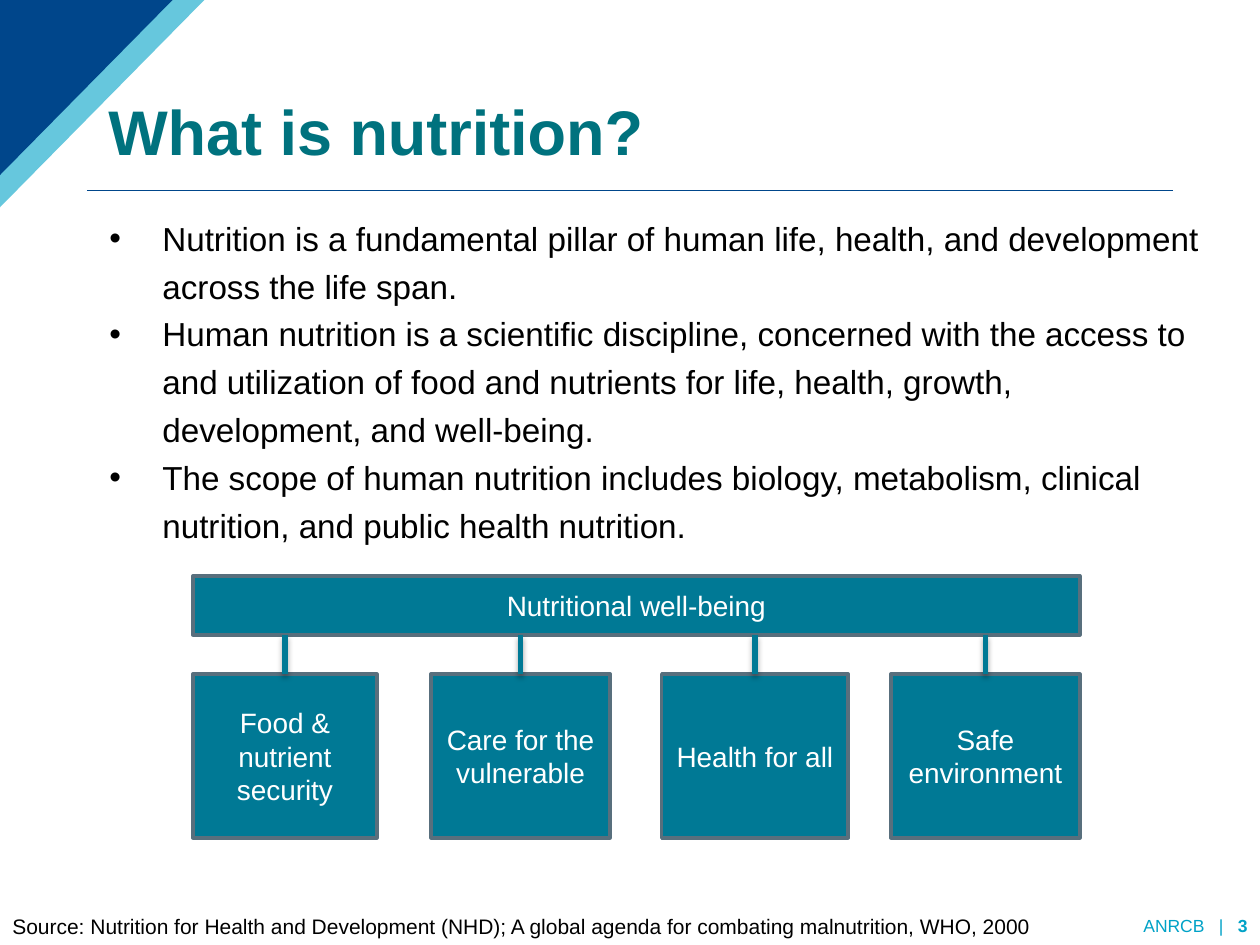
"""Build the slide on what nutrition is, with its four-pillar diagram."""
import pptx
import pptx.dml.color
import pptx.enum.shapes
import pptx.enum.text
import pptx.oxml
import pptx.oxml.ns
import pptx.util

Cm = pptx.util.Cm
Pt = pptx.util.Pt
RGBColor = pptx.dml.color.RGBColor
MSO_ANCHOR = pptx.enum.text.MSO_ANCHOR
PP_ALIGN = pptx.enum.text.PP_ALIGN

NAVY = RGBColor(0x00, 0x46, 0x8B)
CYAN = RGBColor(0x00, 0xA2, 0xC7)
TITLE_TEAL = RGBColor(0x00, 0x72, 0x7E)
BOX_TEAL = RGBColor(0x00, 0x79, 0x95)
SLATE = RGBColor(0x58, 0x6F, 0x7D)
BLACK = RGBColor(0x00, 0x00, 0x00)
WHITE = RGBColor(0xFF, 0xFF, 0xFF)
NS = pptx.oxml.ns.nsdecls("a")


def add_run(p, text, size, color, bold=False):
    r = p.add_run()
    r.text = text
    r.font.name = "Arial"
    r.font.size = Pt(size)
    r.font.bold = bold
    r.font.color.rgb = color
    return r


def add_box(left, top, width, height, text):
    sp = slide.shapes.add_shape(
        pptx.enum.shapes.MSO_SHAPE.RECTANGLE, Cm(left), Cm(top), Cm(width), Cm(height))
    sp.shadow.inherit = False
    sp.fill.solid()
    sp.fill.fore_color.rgb = BOX_TEAL
    sp.line.color.rgb = SLATE
    sp.line.width = Pt(2)
    tf = sp.text_frame
    tf.word_wrap = True
    tf.vertical_anchor = MSO_ANCHOR.MIDDLE
    p = tf.paragraphs[0]
    p.alignment = PP_ALIGN.CENTER
    add_run(p, text, 16, WHITE)
    return sp


prs = pptx.Presentation()
prs.slide_width = Cm(25.4)
prs.slide_height = Cm(19.05)
slide = prs.slides.add_slide(prs.slide_layouts[1])

STRAIGHT = pptx.enum.shapes.MSO_CONNECTOR.STRAIGHT
rule = slide.shapes.add_connector(STRAIGHT, Cm(1.75), Cm(3.84), Cm(23.65), Cm(3.84))
rule.line.color.rgb = NAVY
rule.line.width = Pt(0.75)
rule._element.spPr.append(pptx.oxml.parse_xml(f"<a:effectLst {NS}/>"))

for width, height, color, alpha in [(4.12, 4.18, CYAN, 60), (3.48, 3.53, NAVY, 100)]:
    fb = slide.shapes.build_freeform(0, 0)
    fb.add_line_segments([(Cm(width), 0), (0, Cm(height))], close=True)
    sp = fb.convert_to_shape()
    sp.shadow.inherit = False
    sp.fill.solid()
    sp.fill.fore_color.rgb = color
    sp.line.fill.background()
    if alpha < 100:
        clr = sp._element.spPr.find(".//" + pptx.oxml.ns.qn("a:srgbClr"))
        clr.append(pptx.oxml.parse_xml(f'<a:alpha {NS} val="{alpha * 1000}"/>'))

title = slide.shapes.title
title.left, title.top, title.width, title.height = Cm(1.93), Cm(1.63), Cm(21.89), Cm(1.9)
tf = title.text_frame
tf.auto_size = pptx.enum.text.MSO_AUTO_SIZE.NONE
tf.vertical_anchor = MSO_ANCHOR.BOTTOM
p = tf.paragraphs[0]
p.alignment = PP_ALIGN.LEFT
p.line_spacing = 0.9
add_run(p, "What is nutrition?", 36, TITLE_TEAL, True)

body = slide.placeholders[1]
body.left, body.top, body.width, body.height = Cm(1.75), Cm(4.11), Cm(23.06), Cm(6.83)
tf = body.text_frame
tf.auto_size = pptx.enum.text.MSO_AUTO_SIZE.NONE
points = [
    "Nutrition is a fundamental pillar of human life, health, and development "
    "across the life span.",
    "Human nutrition is a scientific discipline, concerned with the access to and "
    "utilization of food and nutrients for life, health, growth, development, "
    "and well-being.",
    "The scope of human nutrition includes biology, metabolism, clinical nutrition, "
    "and public health nutrition.",
]
for i, text in enumerate(points):
    p = tf.add_paragraph() if i else tf.paragraphs[0]
    p.line_spacing = 1.2
    p.space_before = Pt(0)
    pPr = p._p.get_or_add_pPr()
    pPr.set("marL", str(Cm(1.27)))
    pPr.set("indent", str(Cm(-1.07)))
    for bullet in [f'<a:buClr {NS}><a:srgbClr val="{BLACK}"/></a:buClr>',
                   f'<a:buFont {NS} typeface="Arial"/>',
                   f'<a:buChar {NS} char="•"/>']:
        pPr.append(pptx.oxml.parse_xml(bullet))
    add_run(p, text, 19, BLACK)

footer = slide.shapes.add_textbox(Cm(21.2), Cm(18.4), Cm(4.2), Cm(0.53))
tf = footer.text_frame
tf.word_wrap = True
tf.vertical_anchor = MSO_ANCHOR.MIDDLE
p = tf.paragraphs[0]
p.alignment = PP_ALIGN.RIGHT
for text in ["ANRCB", " ", "|", " ", "3"]:
    r = add_run(p, text, 10, CYAN, text == "3")
    if text == " ":
        r.font._element.set("spc", "550")

source = slide.shapes.add_textbox(Cm(0), Cm(18.29), Cm(22.63), Cm(0.76))
tf = source.text_frame
tf.word_wrap = True
add_run(tf.paragraphs[0],
        "Source: Nutrition for Health and Development (NHD); A global agenda for "
        "combating malnutrition, WHO, 2000", 12, BLACK)

bar = add_box(3.89, 11.61, 17.88, 1.19, "Nutritional well-being")
pillars = [
    (3.89, 3.71, "Food & nutrient security"),
    (8.69, 3.61, "Care for the vulnerable"),
    (13.34, 3.76, "Health for all"),
    (17.96, 3.81, "Safe environment"),
]
for left, width, text in pillars:
    sp = add_box(left, 13.59, width, 3.3, text)
    x = sp.left + sp.width // 2
    link = slide.shapes.add_connector(STRAIGHT, x, bar.top + bar.height, x, sp.top)
    link.end_connect(sp, 0)
    link.line.color.rgb = BOX_TEAL
    link.line.width = Pt(3)
    link._element.spPr.append(pptx.oxml.parse_xml(
        f'<a:effectLst {NS}><a:outerShdw blurRad="{Pt(3.1)}" dist="{Pt(1.8)}" '
        f'dir="5400000" rotWithShape="0"><a:srgbClr val="{BLACK}">'
        '<a:alpha val="34000"/></a:srgbClr></a:outerShdw></a:effectLst>'))

prs.save("out.pptx")
